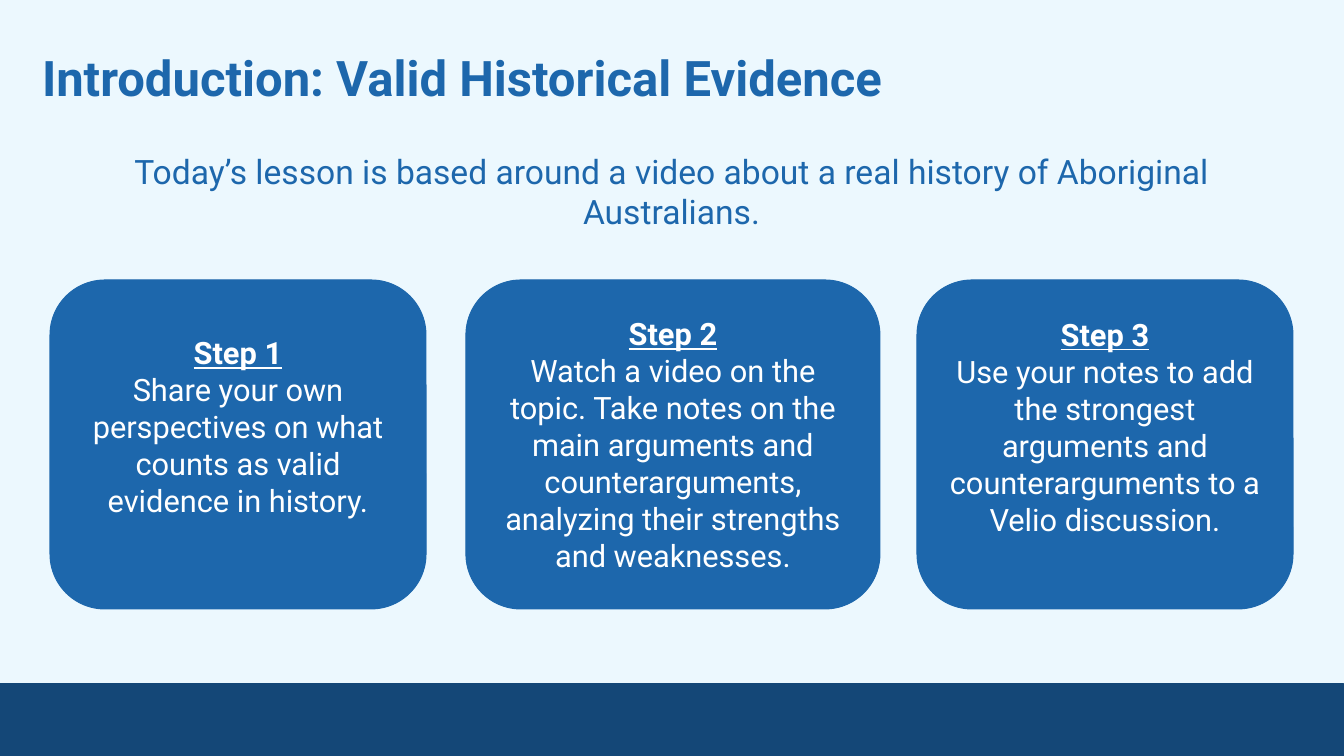
"""Build the lesson introduction slide with its three step cards."""
from pptx import Presentation
from pptx.dml.color import RGBColor
from pptx.enum.shapes import MSO_SHAPE
from pptx.enum.text import MSO_ANCHOR, PP_ALIGN
from pptx.util import Emu, Pt

RECT, ROUND_RECT = MSO_SHAPE.RECTANGLE, MSO_SHAPE.ROUNDED_RECTANGLE
LEFT, CENTER = PP_ALIGN.LEFT, PP_ALIGN.CENTER
TOP, MIDDLE = MSO_ANCHOR.TOP, MSO_ANCHOR.MIDDLE
FONT = "Roboto"
PALE, BLUE, NAVY, WHITE = "ECF8FE", "1D67AC", "144777", "FFFFFF"
WIDTH, HEIGHT = 1344, 756
CARD_TOP, CARD_HEIGHT = 280, 329
STEPS = [
    (50, 376, 46, "Share your own perspectives on what counts as valid evidence in history."),
    (466, 414, 10, "Watch a video on the topic. Take notes on the main arguments and "
                   "counterarguments, analyzing their strengths and weaknesses."),
    (917, 376, 46, "Use your notes to add the strongest arguments and counterarguments "
                   "to a Velio discussion."),
]


def px(n):
    """Turn slide pixels into EMU."""
    return Emu(round(n * 914400 / 100.8))


def rgb(color):
    """Turn a hex string into a colour."""
    return RGBColor.from_string(color)


def set_frame(tf, inset, bottom, anchor):
    """Set wrapping, insets and anchor of a text frame."""
    tf.word_wrap = True
    tf.margin_left = tf.margin_top = tf.margin_right = px(inset)
    tf.margin_bottom = px(bottom)
    tf.vertical_anchor = anchor


def set_paragraph(p, text, size, color, align, bold=False, underline=False):
    """Fill one paragraph and set its font."""
    p.text = text
    p.alignment = align
    font = p.font
    font.name, font.size, font.color.rgb = FONT, Pt(size), rgb(color)
    font.bold, font.underline = bold, underline


def add_text(s, box, text, size, align, inset, bold=False):
    """Add a text box with one paragraph."""
    tf = s.shapes.add_textbox(*map(px, box)).text_frame
    set_frame(tf, inset, inset, TOP)
    set_paragraph(tf.paragraphs[0], text, size, BLUE, align, bold)


def add_block(s, kind, box, color):
    """Add a filled shape without shadow."""
    sp = s.shapes.add_shape(kind, *map(px, box))
    sp.shadow.inherit = False
    sp.fill.solid()
    sp.fill.fore_color.rgb = rgb(color)
    sp.line.color.rgb = rgb(color)
    sp.line.width = Pt(0.75)
    return sp


def add_card(s, number, left, width, bottom, text):
    """Add a rounded card with a step heading and its task."""
    sp = add_block(s, ROUND_RECT, (left, CARD_TOP, width, CARD_HEIGHT), BLUE)
    sp.adjustments[0] = 0.167
    tf = sp.text_frame
    set_frame(tf, 10, bottom, MIDDLE)
    set_paragraph(tf.paragraphs[0], f"Step {number}", 22, WHITE, CENTER, True, True)
    set_paragraph(tf.add_paragraph(), text, 22, WHITE, CENTER)


def main():
    """Build and save the slide."""
    prs = Presentation()
    prs.slide_width, prs.slide_height = px(WIDTH), px(HEIGHT)
    s = prs.slides.add_slide(prs.slide_layouts[6])
    s.background.fill.solid()
    s.background.fill.fore_color.rgb = rgb(PALE)
    add_block(s, RECT, (0, 684, WIDTH, 72), NAVY)
    add_text(s, (29, 35, 1229, 87), "Introduction: Valid Historical Evidence", 35, LEFT, 13, True)
    add_text(s, (57, 141, 1229, 142), "Today’s lesson is based around a video about a real "
             "history of Aboriginal Australians.", 24, CENTER, 10)
    for number, step in enumerate(STEPS, 1):
        add_card(s, number, *step)
    prs.save("out.pptx")


if __name__ == "__main__":
    main()
